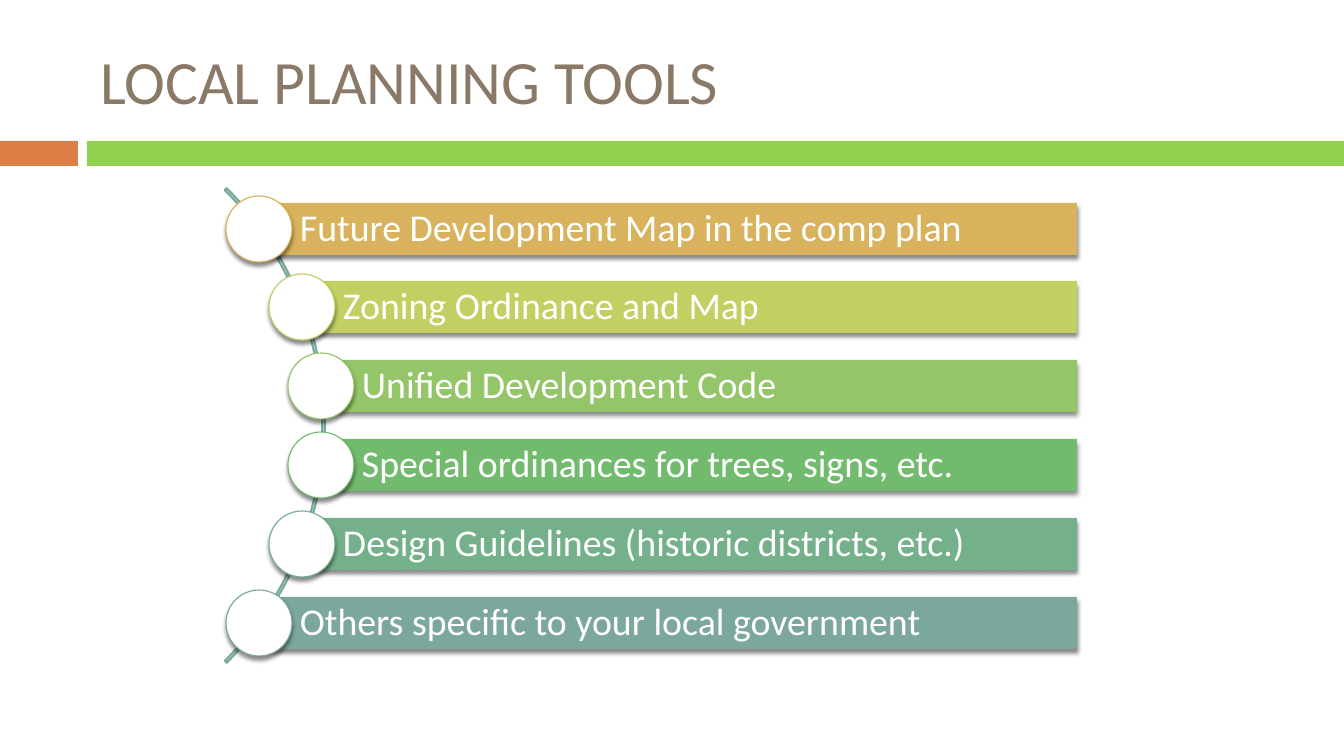
from lxml import etree
from pptx import Presentation
from pptx.dml.color import RGBColor
from pptx.enum.shapes import MSO_SHAPE
from pptx.enum.text import MSO_ANCHOR, PP_ALIGN
from pptx.oxml.ns import qn
from pptx.util import Emu, Pt

PX = 12192000 / 1344
WHITE = RGBColor(0xFF, 0xFF, 0xFF)
BLACK = RGBColor(0x00, 0x00, 0x00)
BROWN = RGBColor(0x8A, 0x79, 0x67)
ORANGE = RGBColor(0xDD, 0x80, 0x47)
LIME = RGBColor(0x92, 0xD0, 0x50)
GOLD = RGBColor(0xD8, 0xB2, 0x5C)
OLIVE = RGBColor(0xC3, 0xCF, 0x62)
LEAF = RGBColor(0x94, 0xC5, 0x68)
GREEN = RGBColor(0x72, 0xBB, 0x6E)
SEA = RGBColor(0x74, 0xB1, 0x8A)
TEAL = RGBColor(0x7B, 0xA7, 0x9D)

FIRST_TOP, LAST_TOP = 203, 597
BAR_RIGHT, BAR_HEIGHT, DOT = 1077, 52, 66
# Text, colour and left edge of each bar
TOOLS = [
    ("Future Development Map in the comp plan", GOLD, 259),
    ("Zoning Ordinance and Map", OLIVE, 302),
    ("Unified Development Code", LEAF, 321),
    ("Special ordinances for trees, signs, etc.", GREEN, 321),
    ("Design Guidelines (historic districts, etc.)", SEA, 302),
    ("Others specific to your local government", TEAL, 259),
]


def px(n):
    return Emu(round(n * PX))


def add_shadow(sp):
    effects = sp._element.spPr.find(qn("a:effectLst"))
    shadow = etree.SubElement(effects, qn("a:outerShdw"), blurRad=str(Pt(3)),
                              dist=str(Pt(2.4)), dir="5400000", rotWithShape="0")
    color = etree.SubElement(shadow, qn("a:srgbClr"), val=str(BLACK))
    etree.SubElement(color, qn("a:alpha"), val="45000")


def add_shape(s, kind, left, top, width, height, fill=None, line=None,
              line_width=0.79, shadow=False):
    sp = s.shapes.add_shape(kind, px(left), px(top), px(width), px(height))
    sp.shadow.inherit = False
    if fill is None:
        sp.fill.background()
    else:
        sp.fill.solid()
        sp.fill.fore_color.rgb = fill
    if line is None:
        sp.line.fill.background()
    else:
        sp.line.color.rgb = line
        sp.line.width = Pt(line_width)
    if shadow:
        add_shadow(sp)
    return sp


def set_text(sp, text, size, color, margins=(10, 5, 10, 5), spacing=None):
    """Write one left-aligned, vertically centred line; margins run left, top, right, bottom."""
    tf = sp.text_frame
    tf.word_wrap = True
    tf.vertical_anchor = MSO_ANCHOR.MIDDLE
    tf.margin_left, tf.margin_top, tf.margin_right, tf.margin_bottom = map(px, margins)
    p = tf.paragraphs[0]
    p.alignment = PP_ALIGN.LEFT
    p.line_spacing = spacing
    r = p.add_run()
    r.text = text
    r.font.name = "Calibri"
    r.font.size = Pt(size)
    r.font.color.rgb = color


def add_title(s, text):
    title = s.shapes.title
    title.left, title.top, title.width, title.height = map(px, (90, 25, 1199, 109))
    set_text(title, text, 44, BROWN)


def add_arc(s):
    arc = add_shape(s, MSO_SHAPE.BLOCK_ARC, -346, 90, 671, 671, line=TEAL, line_width=1.5)
    for i, value in enumerate((189, 27, 0.004)):
        arc.adjustments[i] = value


def add_tool(s, top, text, color, left):
    bar = add_shape(s, MSO_SHAPE.RECTANGLE, left, top, BAR_RIGHT - left, BAR_HEIGHT,
                    fill=color, shadow=True)
    set_text(bar, text, 27, WHITE, margins=(41, 7, 7, 7), spacing=0.9)
    add_shape(s, MSO_SHAPE.OVAL, left - DOT // 2, top - (DOT - BAR_HEIGHT) // 2, DOT, DOT,
              fill=WHITE, line=color, shadow=True)


def main():
    prs = Presentation()
    prs.slide_width, prs.slide_height = px(1344), px(756)
    s = prs.slides.add_slide(prs.slide_layouts[5])
    add_shape(s, MSO_SHAPE.RECTANGLE, 0, 141, 78, 25, fill=ORANGE)
    add_shape(s, MSO_SHAPE.RECTANGLE, 87, 141, 1257, 25, fill=LIME)
    add_title(s, "LOCAL PLANNING TOOLS")
    add_arc(s)
    for i, (text, color, left) in enumerate(TOOLS):
        top = FIRST_TOP + i * (LAST_TOP - FIRST_TOP) // (len(TOOLS) - 1)
        add_tool(s, top, text, color, left)
    prs.save("out.pptx")


if __name__ == "__main__":
    main()
